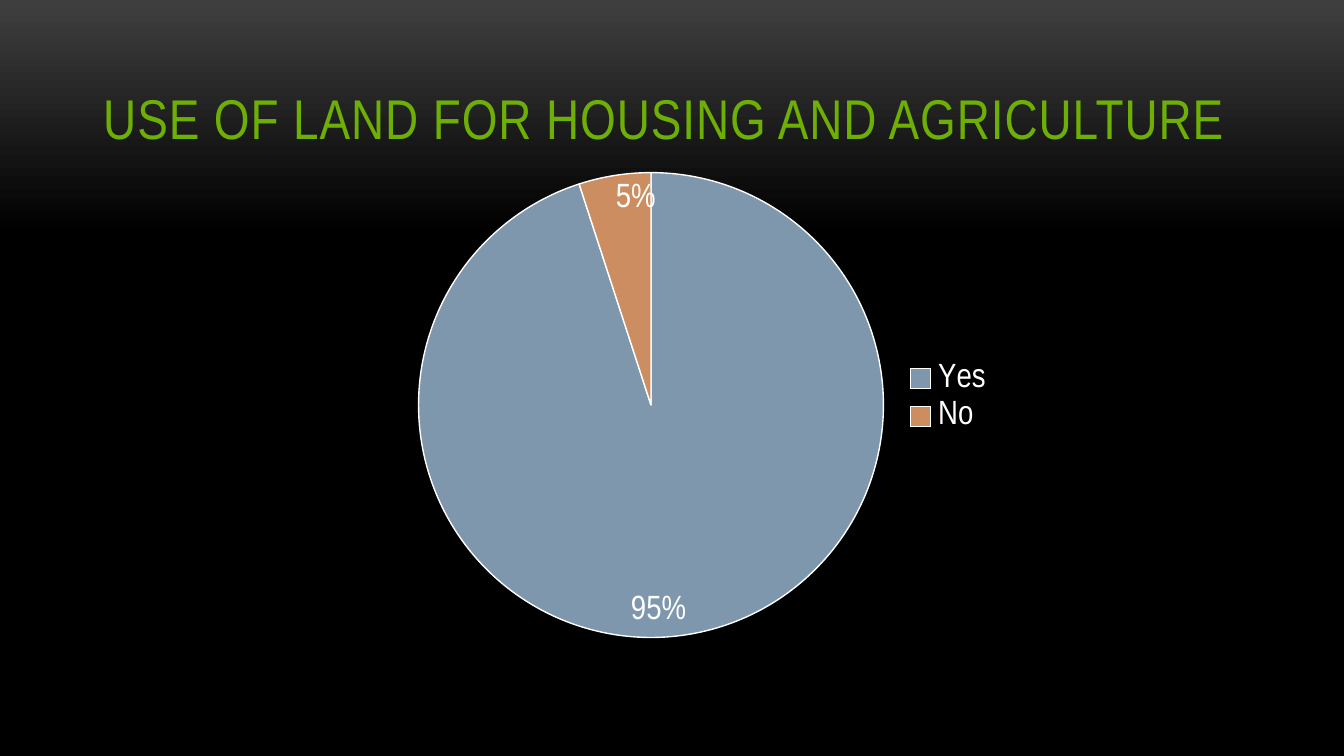
from lxml.etree import SubElement
from pptx import Presentation
from pptx.chart.data import CategoryChartData
from pptx.dml.color import RGBColor
from pptx.enum.chart import XL_CHART_TYPE, XL_LABEL_POSITION, XL_LEGEND_POSITION
from pptx.enum.text import MSO_ANCHOR
from pptx.oxml.ns import qn
from pptx.util import Emu, Pt

PX_PER_INCH = 134.4
FONT = "Arial Narrow"
WHITE = "FFFFFF"
ANSWERS = {"Yes": (95, "7E97AD"), "No": (5, "CC8E60")}


def px(length):
    """Turn pixels into EMU."""
    return Emu(round(length * 914400 / PX_PER_INCH))


def rgb(code):
    """Turn a hex string into a colour."""
    return RGBColor.from_string(code)


def style_font(font, size, color):
    """Set the slide's typeface with a size and colour."""
    font.name = FONT
    font.size = Pt(size)
    font.color.rgb = rgb(color)


def paint_background(slide, stops):
    """Fill the background with a gradient running downwards."""
    fill = slide.background.fill
    fill.gradient()
    fill.gradient_angle = 270
    for stop, (position, color) in zip(fill.gradient_stops, stops):
        stop.position = position
        stop.color.rgb = rgb(color)


def add_title(slide, wording, left, top, width, height):
    """Add the bottom-anchored, slightly spaced heading."""
    frame = slide.shapes.add_textbox(*map(px, (left, top, width, height))).text_frame
    frame.word_wrap = True
    frame.vertical_anchor = MSO_ANCHOR.BOTTOM
    heading = frame.paragraphs[0]
    run = heading.add_run()
    run.text = wording
    run.font._element.set("spc", "50")
    style_font(heading.font, 30, "6EAF05")


def place_plot(chart, **fractions):
    """Fix the inner plot area as fractions of the chart."""
    plot_area = chart._chartSpace.chart.plotArea
    for old_layout in plot_area.findall(qn("c:layout")):
        plot_area.remove(old_layout)
    layout = SubElement(plot_area, qn("c:layout"))
    plot_area.insert(0, layout)
    manual = SubElement(layout, qn("c:manualLayout"))
    settings = {"layoutTarget": "inner", "xMode": "edge", "yMode": "edge", **fractions}
    for tag, value in settings.items():
        SubElement(manual, qn(f"c:{tag}")).set("val", str(value))


def add_pie(slide, answers, left, top, width, height):
    """Add the pie of answers with percentages and a legend."""
    land_use = CategoryChartData()
    land_use.categories = list(answers)
    land_use.add_series("Series 1", [share for share, _ in answers.values()])
    chart = slide.shapes.add_chart(
        XL_CHART_TYPE.PIE, *map(px, (left, top, width, height)), land_use
    ).chart
    style_font(chart.font, 18, WHITE)
    chart.has_title = False
    chart.has_legend = True
    chart.legend.position = XL_LEGEND_POSITION.RIGHT
    chart.legend.include_in_layout = False
    style_font(chart.legend.font, 18, WHITE)

    pie = chart.plots[0]
    pie.vary_by_categories = True
    pie.has_data_labels = True
    labels = pie.data_labels
    labels.show_percentage = True
    labels.show_value = False
    labels.number_format = "0%"
    labels.number_format_is_linked = False
    labels.position = XL_LABEL_POSITION.INSIDE_END
    style_font(labels.font, 18, WHITE)

    for index, (_, color) in enumerate(answers.values()):
        wedge = pie.series[0].points[index].format
        wedge.fill.solid()
        wedge.fill.fore_color.rgb = rgb(color)
        wedge.line.color.rgb = rgb(WHITE)
        wedge.line.width = Pt(0.75)
    place_plot(chart, x=0.07, y=0.06, w=0.76, h=0.91)


def main():
    """Build and save the slide."""
    presentation = Presentation()
    presentation.slide_width = px(1344)
    presentation.slide_height = px(756)
    slide = presentation.slides.add_slide(presentation.slide_layouts[6])
    paint_background(slide, [(0, "3F3F3F"), (0.31, "000000")])
    add_title(slide, "USE OF LAND FOR HOUSING AND AGRICULTURE", 90, 31, 1165, 126)
    add_pie(slide, ANSWERS, 359, 142, 649, 511)
    presentation.save("out.pptx")


if __name__ == "__main__":
    main()
